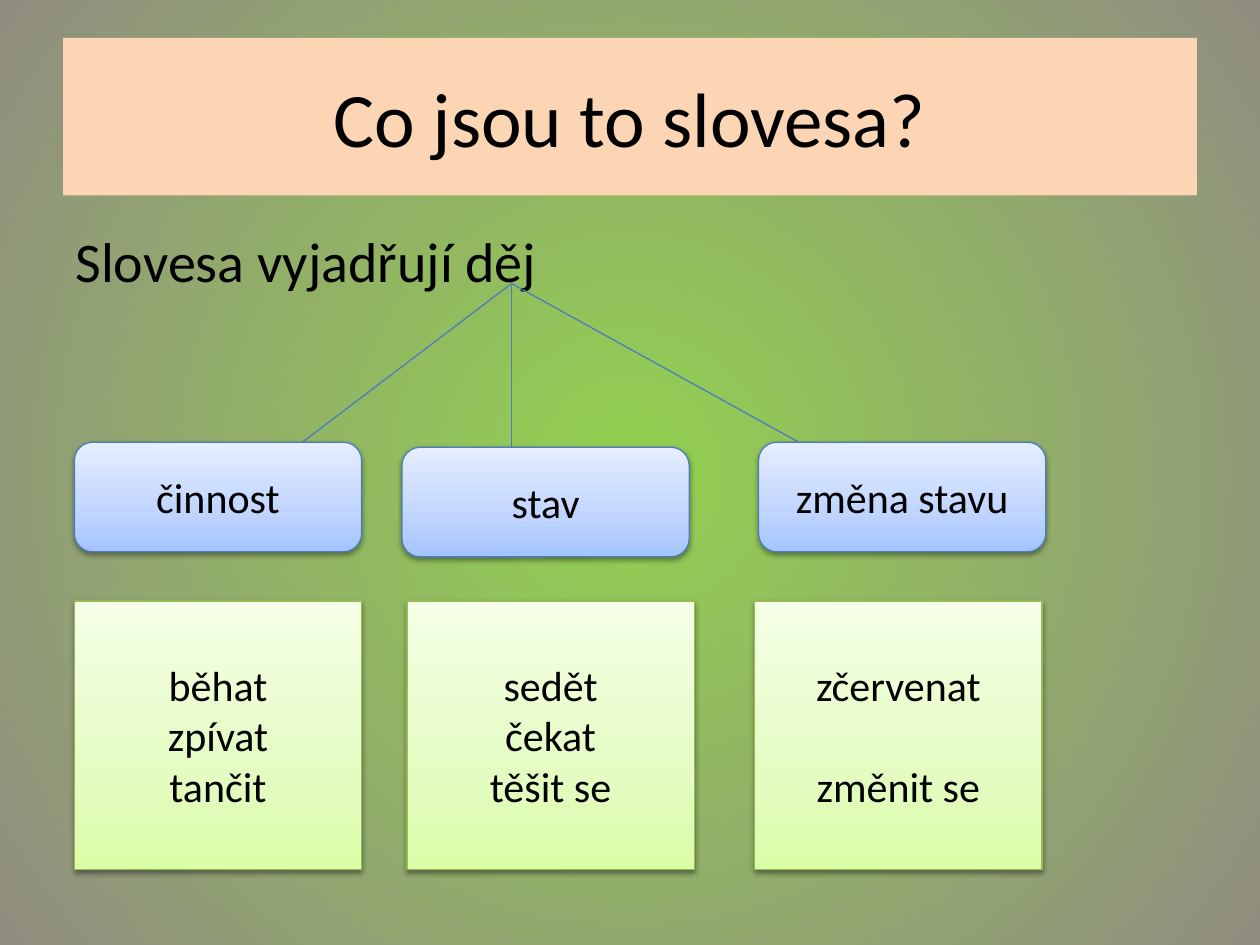
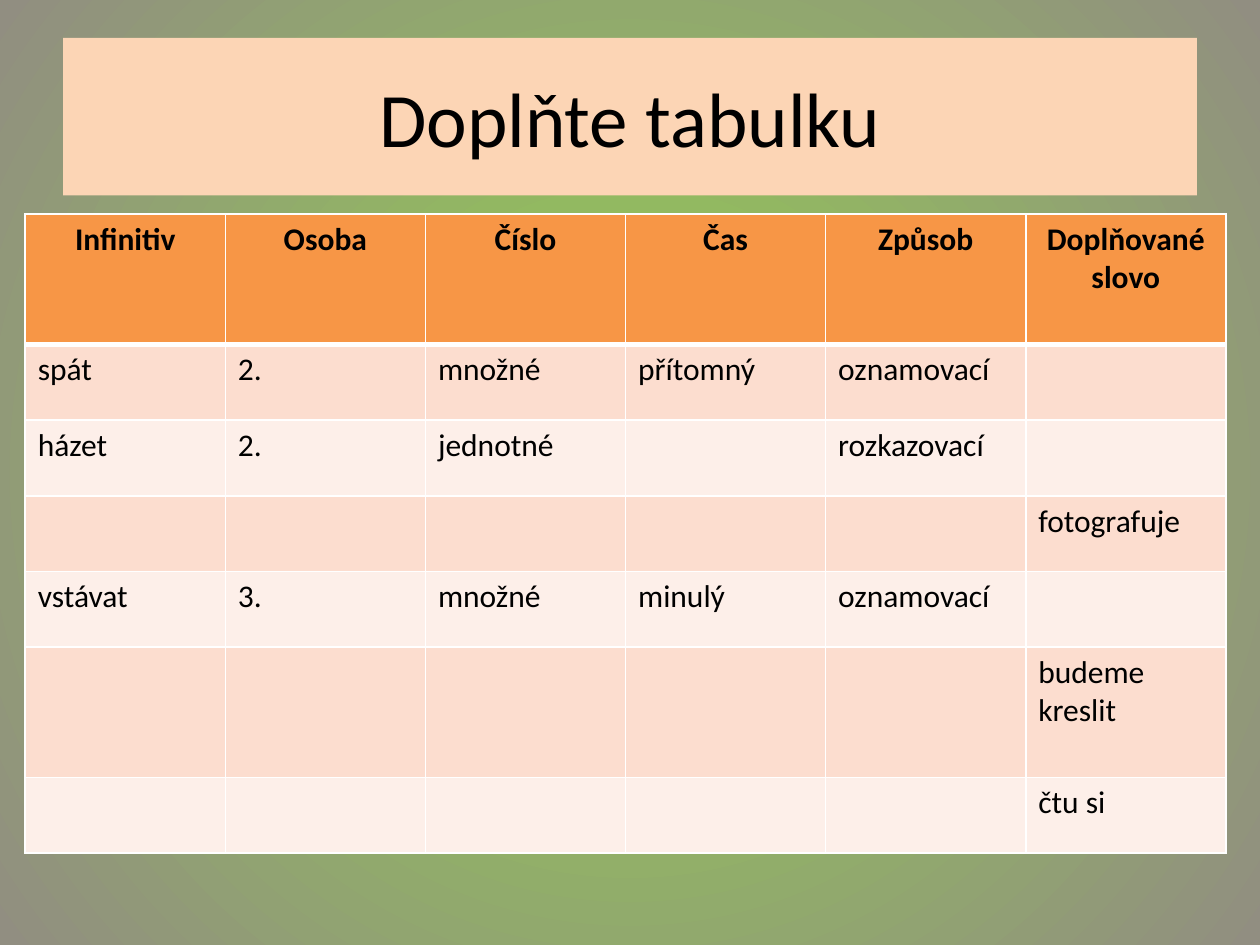
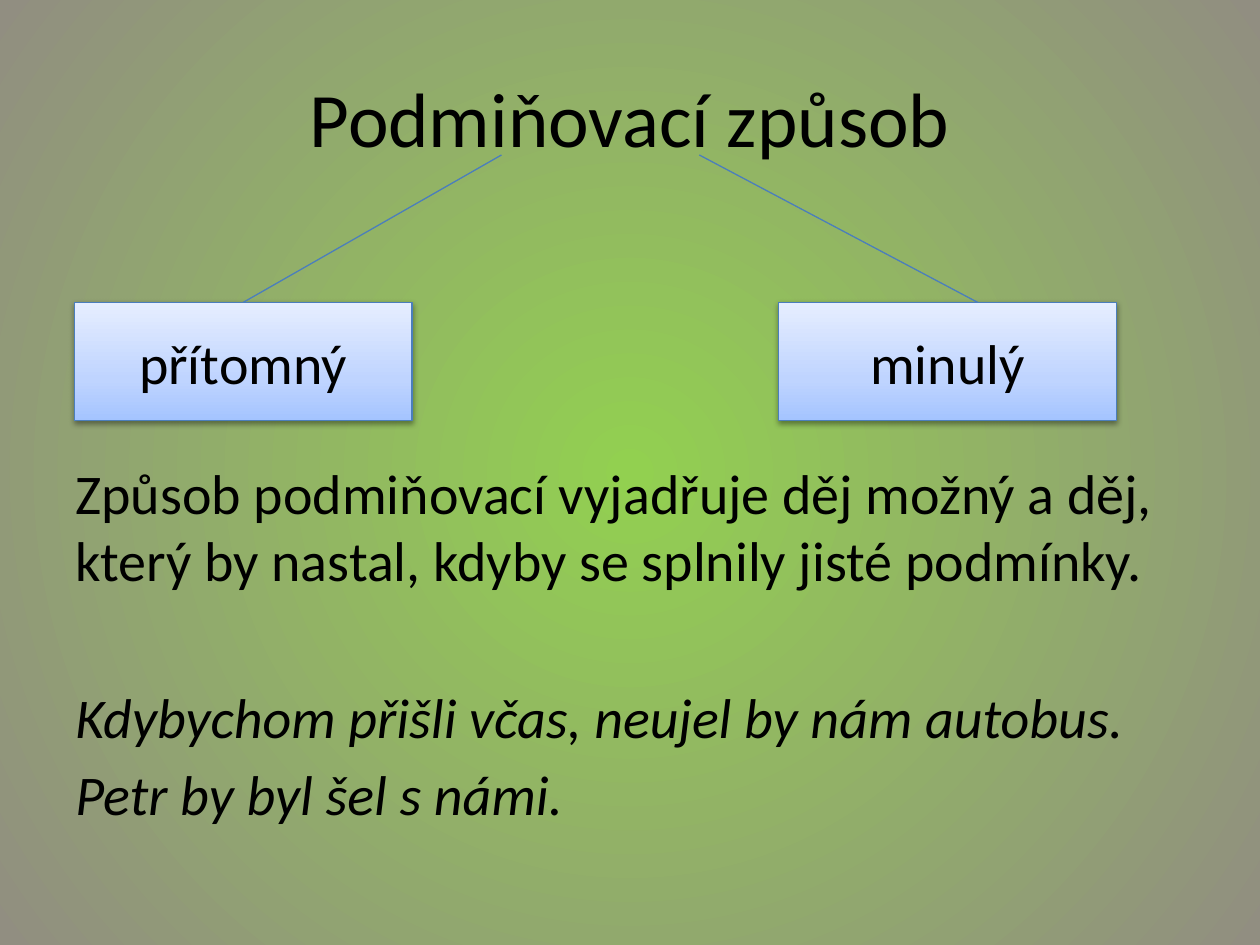
import dataclasses

import lxml.etree
import pptx
import pptx.dml.color
import pptx.enum.shapes
import pptx.enum.text
import pptx.oxml.ns
import pptx.util

SHAPES = pptx.enum.shapes.MSO_SHAPE
ALIGN = pptx.enum.text.PP_ALIGN
ANCHOR = pptx.enum.text.MSO_ANCHOR
COLUMNS, ROWS = 100, 75
UNIT = pptx.util.Inches(0.1)


@dataclasses.dataclass(frozen=True)
class Theme:
    """Colours, gradients and type sizes shared by all slides."""
    font: str = "Calibri"
    ink: str = "000000"
    title_band: str = "FCD5B5"
    line: str = "4B7EBC"
    card_line: str = "98B955"
    border: str = "FFFFFF"
    header: str = "F79646"
    bands: tuple = ("FCDDCF", "FDEFE9")
    background: tuple = ((0, "92D050"), (100, "918E81"))
    blue: tuple = ((0, "A4C4FF"), (35, "BFD4FF"), (100, "E6EEFF"))
    green: tuple = ((0, "DAFDA7"), (35, "E4FCC2"), (100, "F5FFE7"))
    title: int = 44
    body: int = 32
    label: int = 24
    cell: int = 18
    line_width: float = 0.75


THEME = Theme()


@dataclasses.dataclass(frozen=True)
class Box:
    """A rectangle measured in grid columns and rows."""
    left: float
    top: float
    width: float
    height: float

    def inside(self, left, top, width, height):
        """Return a box placed relative to this one."""
        return Box(self.left + left, self.top + top, width, height)

    def point(self, column, row):
        """Return the slide position of a grid point in this box."""
        return round((self.left + column) * UNIT), round((self.top + row) * UNIT)

    def lengths(self):
        """Return left, top, width and height in slide lengths."""
        return [round(value * UNIT) for value in dataclasses.astuple(self)]


PAGE = Box(0, 0, COLUMNS, ROWS)
TITLE = PAGE.inside(5, 3, 90, 12.5)


def color(value):
    """Turn a hex string into a colour."""
    return pptx.dml.color.RGBColor.from_string(value)


def add_element(parent, tag, **attributes):
    """Append a drawing element with its attributes."""
    element = lxml.etree.SubElement(parent, pptx.oxml.ns.qn(tag))
    for name, value in attributes.items():
        element.set(name, str(value))
    return element


def add_color(parent, value):
    """Append a hex colour element."""
    return add_element(parent, "a:srgbClr", val=value)


def paint_gradient(owner, fill, stops, radial=False):
    """Fill an object with a rising or a radial gradient."""
    fill.gradient()
    gradient = next(owner.element.iter(pptx.oxml.ns.qn("a:gradFill")))
    for child in list(gradient):
        gradient.remove(child)
    stop_list = add_element(gradient, "a:gsLst")
    for position, value in stops:
        add_color(add_element(stop_list, "a:gs", pos=position * 1000), value)
    if radial:
        circle = add_element(gradient, "a:path", path="circle")
        add_element(circle, "a:fillToRect", l=50000, t=50000, r=50000, b=50000)
    else:
        add_element(gradient, "a:lin", ang=270 * 60000, scaled=0)


def add_text(frame, text, *, size, bold=False, italic=False, align=ALIGN.LEFT, before=0):
    """Write one paragraph into a text frame."""
    para = frame.paragraphs[0] if not frame.text else frame.add_paragraph()
    para.alignment = align
    para.space_before = pptx.util.Pt(before)
    span = para.add_run()
    span.text = text
    font = span.font
    font.name, font.size = THEME.font, pptx.util.Pt(size)
    font.bold, font.italic = bold, italic
    font.color.rgb = color(THEME.ink)


def add_page(deck, title, band=True):
    """Add a slide with its title, on a coloured band if wanted."""
    page = deck.slides.add_slide(deck.slide_layouts[5])
    holder = page.shapes.title
    holder.left, holder.top, holder.width, holder.height = TITLE.lengths()
    holder.text_frame.vertical_anchor = ANCHOR.MIDDLE
    if band:
        holder.fill.solid()
        holder.fill.fore_color.rgb = color(THEME.title_band)
    add_text(holder.text_frame, title, size=THEME.title, align=ALIGN.CENTER)
    return page


def add_body(page, box):
    """Add a wrapping text box and return its frame."""
    frame = page.shapes.add_textbox(*box.lengths()).text_frame
    frame.word_wrap = True
    return frame


def add_panel(page, box, lines, *, kind=SHAPES.RECTANGLE, stops=THEME.blue,
              outline=THEME.line, size=THEME.label):
    """Add a shaded panel with centred (text, space before) lines."""
    panel = page.shapes.add_shape(kind, *box.lengths())
    paint_gradient(panel, panel.fill, stops)
    panel.line.color.rgb = color(outline)
    panel.line.width = pptx.util.Pt(THEME.line_width)
    effects = add_element(panel.element.spPr, "a:effectLst")
    shadow = add_element(effects, "a:outerShdw", blurRad=40000, dist=20000,
                         dir=90 * 60000, rotWithShape=0)
    add_element(add_color(shadow, "000000"), "a:alpha", val=38000)
    frame = panel.text_frame
    frame.word_wrap = True
    frame.vertical_anchor = ANCHOR.MIDDLE
    for text, before in lines:
        add_text(frame, text, size=size, align=ALIGN.CENTER, before=before)
    return panel


def add_branch(page, start, end):
    """Draw a thin straight line between two slide positions."""
    branch = page.shapes.add_connector(
        pptx.enum.shapes.MSO_CONNECTOR.STRAIGHT, *start, *end)
    branch.line.color.rgb = color(THEME.line)
    branch.line.width = pptx.util.Pt(THEME.line_width)
    add_element(branch.element.spPr, "a:effectLst")
    return branch


def add_verb_tree(page, box):
    """Branch the statement into three meanings with example verbs."""
    meanings = (
        ("činnost", 0, 0, 18.1, 0, (("běhat", 0), ("zpívat", 0), ("tančit", 0))),
        ("stav", 26, 0.4, 34.7, 26.4, (("sedět", 0), ("čekat", 0), ("těšit se", 0))),
        ("změna stavu", 54.3, 0, 57.5, 54, (("zčervenat", 0), ("změnit se", 29))),
    )
    label_top, card_top, width = 12.6, 25.2, 22.8
    for _, _, drop, end, _, _ in meanings:
        reach = label_top + (2.8 if drop else 0)
        add_branch(page, box.point(34.7, 0), box.point(end, reach))
    for name, left, drop, _, card_left, verbs in meanings:
        add_panel(page, box.inside(left, label_top + drop, width, 8.7),
                  [(name, 0)], kind=SHAPES.ROUNDED_RECTANGLE)
        add_panel(page, box.inside(card_left, card_top, width, 21.3), verbs,
                  stops=THEME.green, outline=THEME.card_line)


def add_borders(cell, widths):
    """Give a cell white borders of the widths named by side."""
    properties = cell._tc.get_or_add_tcPr()
    for side in "LRTB":
        border = add_element(properties, f"a:ln{side}",
                             w=pptx.util.Pt(widths.get(side, 1)))
        add_color(add_element(border, "a:solidFill"), THEME.border)


def add_verb_table(page, box, rows, heights):
    """Add the banded exercise table with a header row."""
    table = page.shapes.add_table(len(rows), len(rows[0]), *box.lengths()).table
    table.horz_banding = False
    for column in table.columns:
        column.width = round(box.width * UNIT / len(rows[0]))
    for index, (texts, height) in enumerate(zip(rows, heights)):
        table.rows[index].height = round(height * UNIT)
        header = index == 0
        fill = THEME.header if header else THEME.bands[(index - 1) % 2]
        widths = {0: {"B": 3}, 1: {"T": 3}}.get(index, {})
        for cell, text in zip(table.rows[index].cells, texts):
            add_borders(cell, widths)
            cell.fill.solid()
            cell.fill.fore_color.rgb = color(fill)
            if text:
                add_text(cell.text_frame, text, size=THEME.cell, bold=header,
                         align=ALIGN.CENTER if header else ALIGN.LEFT)


def add_mood_tree(page, box):
    """Branch the title into the present and past conditional."""
    top, width, height = 11.7, 26.8, 9.4
    present, _ = [
        add_panel(page, box.inside(left, top, width, height), [(name, 0)],
                  size=THEME.body)
        for name, left in (("přítomný", 0), ("minulý", 55.9))
    ]
    branch = add_branch(page, box.point(width / 2, top), box.point(33.9, 0))
    branch.begin_connect(present, 0)
    add_branch(page, box.point(71.7, top), box.point(49.6, 0))


def build_verbs(deck):
    """Build the slide on what verbs are."""
    page = add_page(deck, "Co jsou to slovesa?")
    frame = add_body(page, PAGE.inside(5, 17.5, 90, 15.3))
    add_text(frame, "Slovesa vyjadřují děj", size=THEME.body, before=6)
    add_verb_tree(page, PAGE.inside(5.9, 22.5, 77.1, 46.5))


def build_exercise(deck):
    """Build the slide with the table to complete."""
    page = add_page(deck, "Doplňte tabulku")
    rows = (
        ("Infinitiv", "Osoba", "Číslo", "Čas", "Způsob", "Doplňované slovo"),
        ("spát", "2.", "množné", "přítomný", "oznamovací", ""),
        ("házet", "2.", "jednotné", "", "rozkazovací", ""),
        ("", "", "", "", "", "fotografuje"),
        ("vstávat", "3.", "množné", "minulý", "oznamovací", ""),
        ("", "", "", "", "", "budeme kreslit"),
        ("", "", "", "", "", "čtu si"),
    )
    heights = [10.35 if index in (0, 5) else 6 for index in range(len(rows))]
    add_verb_table(page, PAGE.inside(2, 17, 95.3, sum(heights)), rows, heights)


def build_conditional(deck):
    """Build the slide on the conditional mood."""
    page = add_page(deck, "Podmiňovací způsob", band=False)
    frame = add_body(page, PAGE.inside(5, 35.9, 90, 31.1))
    for text, italic, before in (
        ("Způsob podmiňovací vyjadřuje děj možný a děj, "
         "který by nastal, kdyby se splnily jisté podmínky.", False, 6),
        ("Kdybychom přišli včas, neujel by nám autobus.", True, 51),
        ("Petr by byl šel s námi.", True, 6),
    ):
        add_text(frame, text, size=THEME.body, italic=italic, before=before)
    add_mood_tree(page, PAGE.inside(5.9, 12.3, 82.7, 21.1))


def main():
    """Build and save the deck."""
    deck = pptx.Presentation()
    deck.slide_width, deck.slide_height = COLUMNS * UNIT, ROWS * UNIT
    master = deck.slide_master
    paint_gradient(master, master.background.fill, THEME.background, radial=True)
    for build in (build_verbs, build_exercise, build_conditional):
        build(deck)
    deck.save("out.pptx")


if __name__ == "__main__":
    main()
